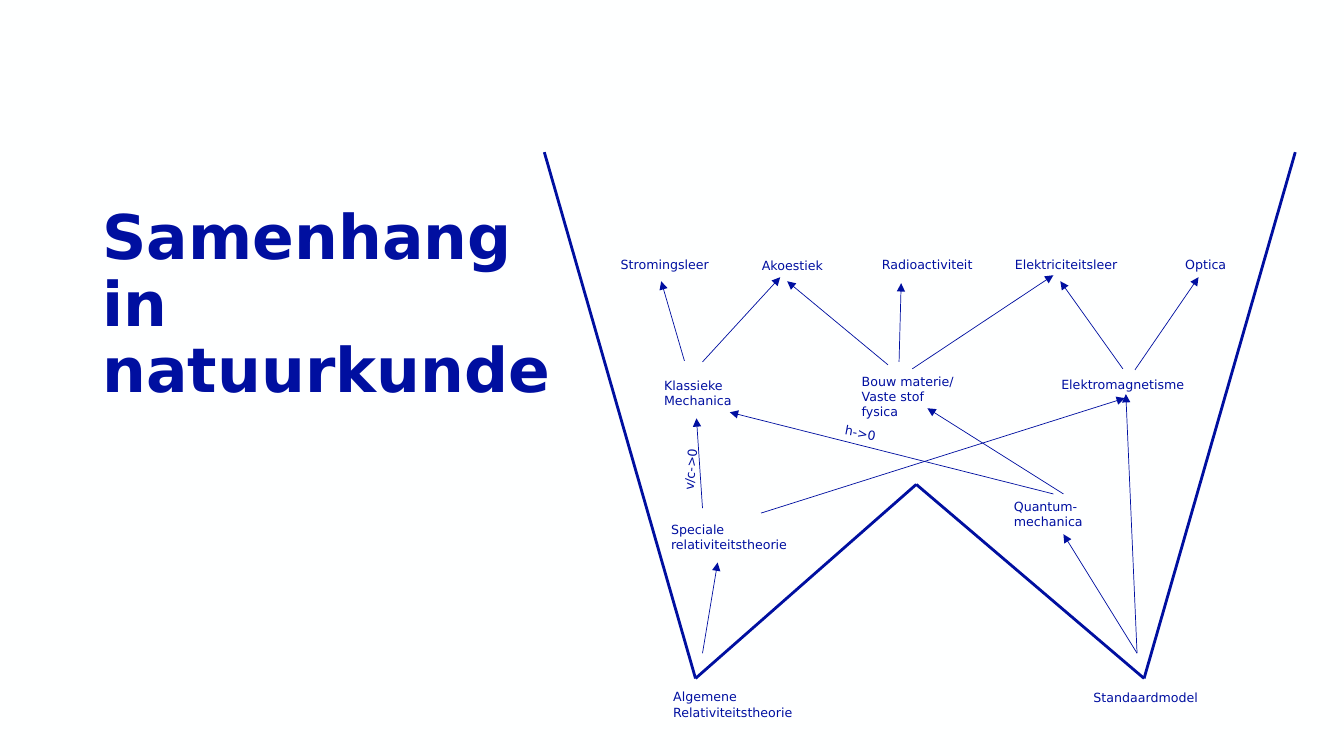
import itertools
import pptx
import pptx.dml.color
import pptx.enum.shapes
import pptx.enum.text
import pptx.oxml
import pptx.oxml.ns
import pptx.util

Pt = pptx.util.Pt
BLUE = "000FA0"


def color(hex_string):
    return pptx.dml.color.RGBColor.from_string(hex_string)


def add_line(start, end, width):
    line = slide.shapes.add_connector(
        pptx.enum.shapes.MSO_CONNECTOR.STRAIGHT, *[Pt(v) for v in start + end])
    line.line.color.rgb = color(BLUE)
    line.line.width = Pt(width)
    properties = line._element.spPr
    properties.append(pptx.oxml.parse_xml(
        f"<a:effectLst {pptx.oxml.ns.nsdecls('a')}/>"))
    return line


deck = pptx.Presentation()
deck.slide_width = Pt(960)
deck.slide_height = Pt(540)
slide = deck.slides.add_slide(deck.slide_layouts[6])
slide.background.fill.solid()
slide.background.fill.fore_color.rgb = color("FEFFFF")

title = slide.shapes.add_textbox(Pt(66.2), Pt(144), Pt(344.2), Pt(193.7))
title.text_frame.word_wrap = True
heading = title.text_frame.paragraphs[0]
heading.line_spacing = 0.9
run = heading.add_run()
run.text = "Samenhang in natuurkunde"
run.font.name = "DejaVu Sans"
run.font.size = Pt(44)
run.font.bold = True
run.font.color.rgb = color(BLUE)

w_outline = [(388.8, 108.7), (496.8, 484.6), (654.5, 346), (817.2, 484.6), (925.2, 108.7)]
for start, end in itertools.pairwise(w_outline):
    add_line(start, end, 2)

theories = [
    (["Algemene", "Relativiteitstheorie"], 473.8, 488.9, 108, 28.8, 0),
    (["Standaardmodel"], 774, 488.9, 108, 18, 0),
    (["Speciale relativiteitstheorie"], 472.3, 369.4, 100.8, 28.8, 0),
    (["Quantum-mechanica"], 717.1, 352.8, 85, 28.8, 0),
    (["Klassieke", "Mechanica"], 467.3, 266.4, 85, 25.9, 0),
    (["Bouw materie/", "Vaste stof fysica"], 608.4, 263.5, 85, 25.9, 0),
    (["Elektromagnetisme"], 751, 265.7, 105.1, 18.7, 0),
    (["Stromingsleer"], 436.3, 180, 85, 15.8, 0),
    (["Akoestiek"], 537.1, 180.7, 85, 15.8, 0),
    (["Radioactiviteit"], 622.8, 180, 85, 15.8, 0),
    (["Elektriciteitsleer"], 717.8, 180, 101.5, 18.7, 0),
    (["Optica"], 839.5, 180, 49, 15.8, 0),
    (["h->0"], 596.2, 304.6, 85, 15.8, 10.5),
    (["v/c->0"], 447.1, 303.8, 92.9, 14.4, 275.1),
]
for names, left, top, width, height, angle in theories:
    theory = slide.shapes.add_textbox(Pt(left), Pt(top), Pt(width), Pt(height))
    theory.rotation = angle
    frame = theory.text_frame
    frame.word_wrap = True
    frame.auto_size = pptx.enum.text.MSO_AUTO_SIZE.SHAPE_TO_FIT_TEXT
    for index, name in enumerate(names):
        paragraph = frame.add_paragraph() if index else frame.paragraphs[0]
        run = paragraph.add_run()
        run.text = name
        run.font.name = "DejaVu Sans"
        run.font.size = Pt(9)
        run.font.color.rgb = color(BLUE)

derivations = [
    ((501.8, 466.6), (512.6, 401.8)),
    ((812.2, 466.6), (759.6, 381.6)),
    ((812.2, 466.6), (804.2, 281.5)),
    ((501.8, 362.9), (497.5, 298.8)),
    ((543.6, 366.5), (803.5, 284.4)),
    ((752.4, 352.8), (521.3, 294.5)),
    ((759.6, 352.8), (662.4, 291.6)),
    ((488.9, 257.8), (472.3, 200.9)),
    ((501.8, 258.5), (557.3, 198)),
    ((634.3, 260.6), (562.3, 200.9)),
    ((642.2, 258.5), (643.7, 202.3)),
    ((651.6, 263.5), (752.4, 196.6)),
    ((802.1, 263.5), (757.4, 200.9)),
    ((810.7, 264.2), (856.1, 198)),
]
for start, end in derivations:
    derivation = add_line(start, end, 0.5)
    derivation.line._get_or_add_ln().append(pptx.oxml.parse_xml(
        f"<a:tailEnd {pptx.oxml.ns.nsdecls('a')} type='triangle'/>"))

deck.save("out.pptx")
